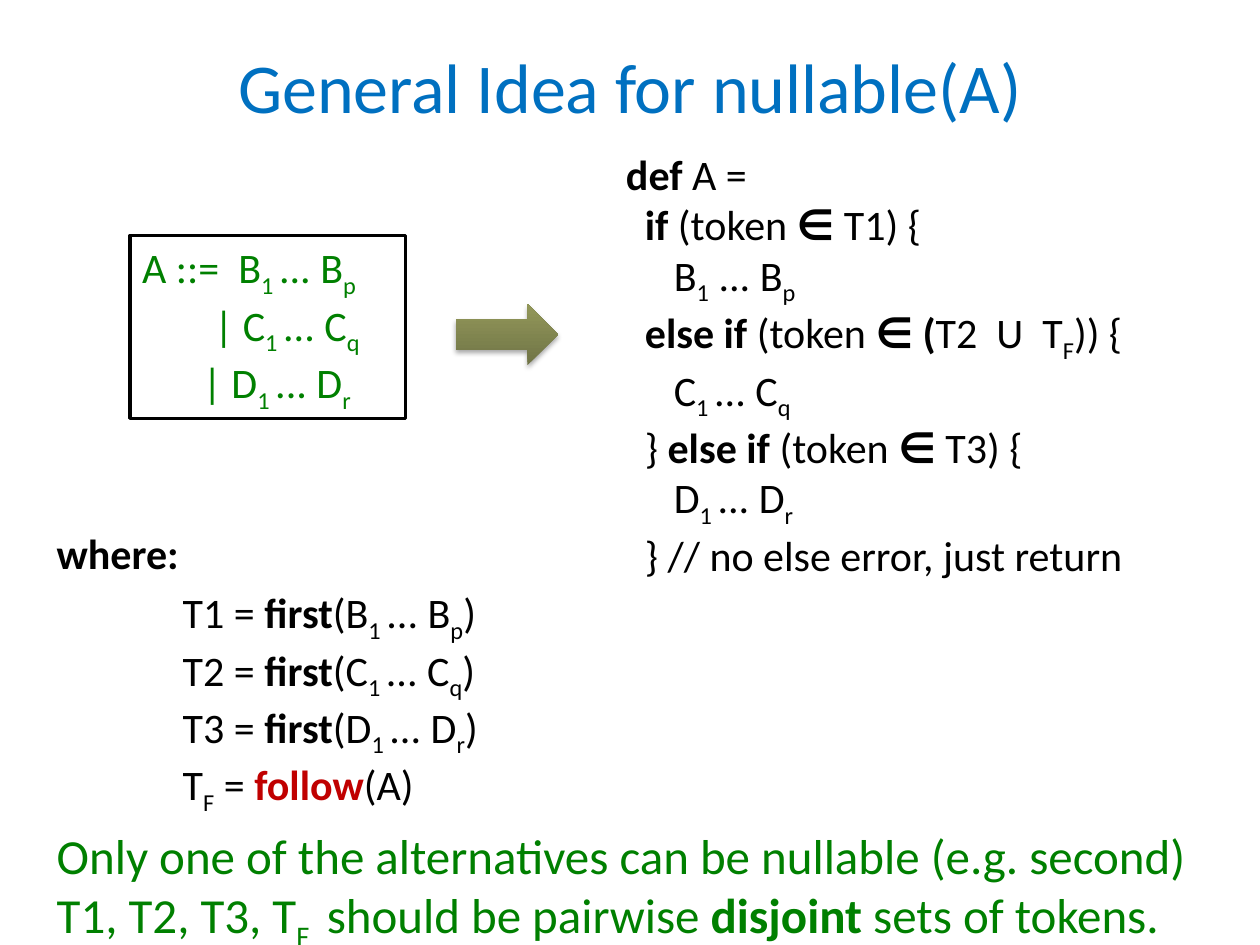
from dataclasses import dataclass
from lxml.etree import SubElement as Sub
from pptx import Presentation
from pptx.dml.color import RGBColor as Rgb
from pptx.enum.shapes import MSO_SHAPE as Kind
from pptx.enum.text import MSO_ANCHOR as Anchor, MSO_AUTO_SIZE as Auto, PP_ALIGN as Align
from pptx.oxml.ns import qn
from pptx.util import Inches, Pt

HUES = {"title": "0070C0", "green": "008000", "black": "000000", "red": "C00000",
        "white": "FFFFFF", "dark": "707446", "light": "93985A"}
FRAME = {"word_wrap": True, "auto_size": Auto.NONE, "vertical_anchor": Anchor.TOP}
MARKS = {"~": "sub", "*": "bold", "^": "red"}


@dataclass
class Line:
    text: str
    left: float = 0
    gap: float = 0
    size: int = 24
    hue: str = "black"


@dataclass
class Box:
    left: float
    top: float
    width: float
    height: float

    def dims(self) -> list:
        return [Inches(v) for v in (self.left, self.top, self.width, self.height)]


def color(name: str) -> Rgb:
    return Rgb.from_string(HUES[name])


def assign(item, props: dict) -> None:
    for key, value in props.items():
        setattr(item, key, value)


def add_run(para, text: str, line: Line, on: set) -> None:
    run = para.add_run()
    run.text = text
    assign(run.font, {"name": "Calibri", "size": Pt(line.size), "bold": "bold" in on})
    run.font.color.rgb = color("red" if "red" in on else line.hue)
    if "sub" in on:
        run.font._element.set("baseline", "-25000")


def add_line(para, line: Line) -> None:
    assign(para, {"alignment": Align.LEFT, "space_before": Pt(line.gap)})
    props = para._p.get_or_add_pPr()
    props.set("marL", str(Inches(line.left)))
    props.set("indent", "0")
    Sub(props, qn("a:buNone"))
    on, part = set(), ""
    for char in line.text:
        if char not in MARKS:
            part += char
            continue
        if part:
            add_run(para, part, line, on)
        on ^= {MARKS[char]}
        part = ""
    if part:
        add_run(para, part, line, on)


def write(shape, lines: list[Line]) -> None:
    frame = shape.text_frame
    assign(frame, FRAME)
    for i, line in enumerate(lines):
        add_line(frame.add_paragraph() if i else frame.paragraphs[0], line)


def place(shape, box: Box) -> None:
    assign(shape, dict(zip(("left", "top", "width", "height"), box.dims())))


def draw_rule(slide, box: Box, lines: list[Line]) -> None:
    rect = slide.shapes.add_shape(Kind.RECTANGLE, *box.dims())
    rect.shadow.inherit = False
    rect.fill.solid()
    rect.fill.fore_color.rgb = color("white")
    rect.line.color.rgb = color("black")
    rect.line.width = Pt(2)
    write(rect, lines)


def draw_arrow(slide, box: Box) -> None:
    arrow = slide.shapes.add_shape(Kind.RIGHT_ARROW, *box.dims())
    arrow.line.fill.background()
    arrow.fill.gradient()
    arrow.fill.gradient_angle = 90
    for stop, name in zip(arrow.fill.gradient_stops, ("dark", "light")):
        stop.color.rgb = color(name)
    arrow.shadow.inherit = False
    effect = arrow._element.spPr.find(qn("a:effectLst"))
    shade = Sub(effect, qn("a:outerShdw"), blurRad=str(Pt(3.1)), dist=str(Pt(1.8)),
                dir="5400000", rotWithShape="0")
    tint = Sub(shade, qn("a:srgbClr"), val=HUES["black"])
    Sub(tint, qn("a:alpha"), val="35000")


RULE = [Line("A ::=  B~1 ~... B~p~", hue="green"),
        Line("| C~1 ~... C~q~", 0.57, hue="green"),
        Line("| D~1 ~... D~r~", 0.48, hue="green")]
STEP, DEEP = 0.15, 0.38
CODE = [Line("*def* A ="),
        Line("*if* (token *∈ *T1) {", STEP),
        Line("B~1~ ... B~p~", DEEP),
        Line("*else if* (token* ∈ (*T2  U  T~F~)) {", STEP),
        Line("C~1 ~... C~q~", DEEP),
        Line("} *else if* (token* ∈ *T3) {", STEP),
        Line("D~1 ~... D~r~", DEEP),
        Line("} // no else error, just return", STEP)]
SETS = [Line(f"T{i} = *first*({name}~1 ~... {name}~{end}~)", 1, 0 if i > 1 else 4.8)
        for i, (name, end) in enumerate(("Bp", "Cq", "Dr"), 1)]
NOTES = [Line("*where:*"), *SETS, Line("T~F~ = *^follow^*(A)", 1),
         Line("Only one of the alternatives can be nullable (e.g. second) "
              "T1, T2, T3, T~F ~ should be pairwise *disjoint *sets of tokens.",
              gap=5.6, size=28, hue="green")]


def main() -> None:
    deck = Presentation()
    assign(deck, {"slide_width": Inches(10), "slide_height": Inches(7.5)})
    slide = deck.slides.add_slide(deck.slide_layouts[1])
    title, body = slide.placeholders
    place(title, Box(0.5, 0.17, 9, 1.01))
    write(title, [Line("General Idea for nullable(A)", size=40, hue="title")])
    title.text_frame.vertical_anchor = Anchor.MIDDLE
    title.text_frame.paragraphs[0].alignment = Align.CENTER
    draw_rule(slide, Box(1.03, 1.87, 2.19, 1.45), RULE)
    write(slide.shapes.add_textbox(*Box(4.87, 1.13, 5.04, 3.47).dims()), CODE)
    draw_arrow(slide, Box(3.62, 2.41, 0.81, 0.49))
    place(body, Box(0.35, 4.14, 9.24, 2.11))
    write(body, NOTES)
    deck.save("out.pptx")


if __name__ == "__main__":
    main()
